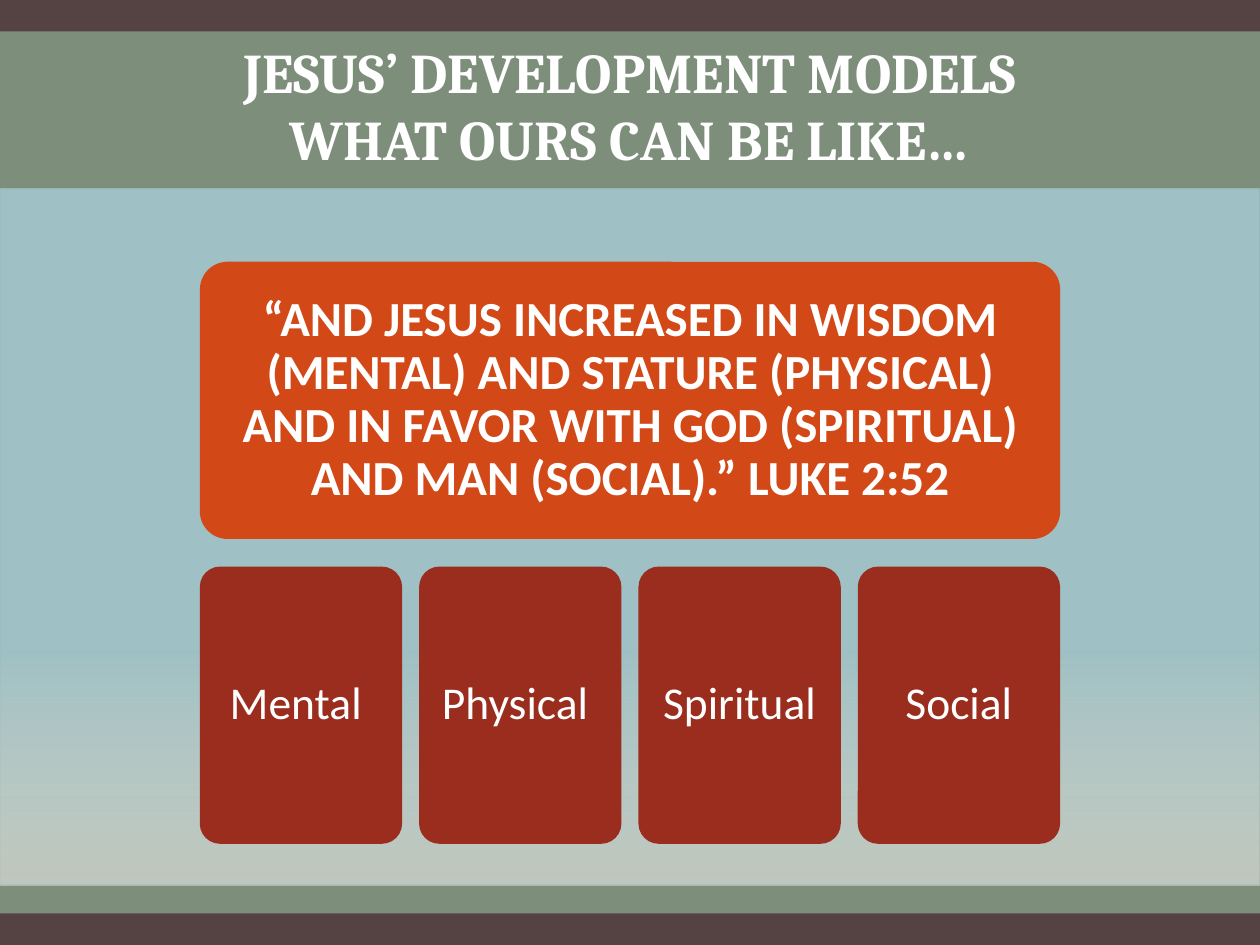
import dataclasses

import lxml.etree
import pptx
import pptx.dml.color
import pptx.enum.shapes
import pptx.enum.text
import pptx.oxml.ns
import pptx.util

Pt = pptx.util.Pt
RGB = pptx.dml.color.RGBColor.from_string
PRESET = pptx.enum.shapes.MSO_SHAPE
ANCHOR = pptx.enum.text.MSO_ANCHOR


@dataclasses.dataclass(frozen=True)
class Theme:
    frame: str = "554343"
    band: str = "829782"
    sky: str = "A8CDD7"
    white: str = "FFFFFF"
    verse: str = "D34817"
    card: str = "9B2D1F"
    title_font: str = "Cambria"
    body_font: str = "Calibri"
    title_size: int = 32
    verse_size: int = 28
    card_size: int = 26


def set_alpha(color_parent, percent):
    """Make every RGB colour below the given element partly transparent."""
    for color in color_parent.iter(pptx.oxml.ns.qn("a:srgbClr")):
        alpha = lxml.etree.SubElement(color, pptx.oxml.ns.qn("a:alpha"))
        alpha.set("val", str(percent * 1000))


class SlideBuilder:
    def __init__(self, slide, theme):
        self.slide = slide
        self.theme = theme

    def panel(self, preset, left, top, width, height):
        """Add a shape without line or shadow; the caller fills it."""
        panel = self.slide.shapes.add_shape(
            preset, Pt(left), Pt(top), Pt(width), Pt(height))
        panel.shadow.inherit = False
        panel.line.fill.background()
        return panel

    def band(self, top, height, color, opacity=100):
        band = self.panel(PRESET.RECTANGLE, 0, top, 720, height)
        band.fill.solid()
        band.fill.fore_color.rgb = RGB(color)
        if opacity < 100:
            set_alpha(band.fill._xPr.solidFill, opacity)

    def gradient_band(self, top, height, stops):
        """Fade downwards through two (position, colour, opacity) stops."""
        band = self.panel(PRESET.RECTANGLE, 0, top, 720, height)
        band.fill.gradient()
        band.fill.gradient_angle = 270
        for stop, (position, color, opacity) in zip(band.fill.gradient_stops, stops):
            stop.position = position
            stop.color.rgb = RGB(color)
            set_alpha(stop._gs, opacity)

    def run(self, paragraph, text, font_name, size, bold):
        run = paragraph.add_run()
        run.text = text
        run.font.name = font_name
        run.font.size = Pt(size)
        run.font.bold = bold
        run.font.color.rgb = RGB(self.theme.white)

    def card(self, left, top, width, height, color, text, size, bold=False):
        card = self.panel(PRESET.ROUNDED_RECTANGLE, left, top, width, height)
        card.adjustments[0] = 0.1
        card.fill.solid()
        card.fill.fore_color.rgb = RGB(color)
        frame = card.text_frame
        frame.word_wrap = True
        frame.vertical_anchor = ANCHOR.MIDDLE
        inset = Pt(0.3 * size)
        frame.margin_left = frame.margin_right = inset
        frame.margin_top = frame.margin_bottom = inset
        paragraph = frame.paragraphs[0]
        paragraph.alignment = pptx.enum.text.PP_ALIGN.CENTER
        paragraph.line_spacing = 0.9
        self.run(paragraph, text, self.theme.body_font, size, bold)

    def title(self, lines, left, top, width, height):
        title = self.slide.shapes.title
        title.left, title.top = Pt(left), Pt(top)
        title.width, title.height = Pt(width), Pt(height)
        self.slide.shapes._spTree.append(title._element)  # in front of the bands
        frame = title.text_frame
        frame.auto_size = pptx.enum.text.MSO_AUTO_SIZE.NONE
        frame.word_wrap = True
        frame.vertical_anchor = ANCHOR.BOTTOM
        paragraph = frame.paragraphs[0]
        paragraph.alignment = pptx.enum.text.PP_ALIGN.CENTER
        for index, line in enumerate(lines):
            if index:
                paragraph.add_line_break()
            self.run(paragraph, line, self.theme.title_font,
                     self.theme.title_size, True)


def main():
    theme = Theme()
    deck = pptx.Presentation()
    deck.slide_width, deck.slide_height = Pt(720), Pt(540)
    builder = SlideBuilder(deck.slides.add_slide(deck.slide_layouts[5]), theme)

    builder.band(0, 540, theme.frame)
    builder.band(18, 504, theme.band, opacity=90)
    builder.gradient_band(107.8, 398.2,
                          [(0.66, theme.sky, 79), (1, theme.white, 50)])

    left, width, height = 114.2, 491.6, 158.4
    builder.card(
        left, 149.6, width, height, theme.verse,
        "“AND JESUS INCREASED IN WISDOM (MENTAL) AND STATURE (PHYSICAL) "
        "AND IN FAVOR WITH GOD (SPIRITUAL) AND MAN (SOCIAL).” LUKE 2:52",
        theme.verse_size, bold=True)

    areas = ["Mental ", "Physical ", "Spiritual", "Social"]
    card_width = 115.6
    pitch = (width - card_width) / (len(areas) - 1)
    for column, area in enumerate(areas):
        builder.card(left + column * pitch, 323.8, card_width, height,
                     theme.card, area, theme.card_size)

    builder.title(["JESUS’ DEVELOPMENT MODELS", "WHAT OURS CAN BE LIKE…"],
                  0, 12, 720, 90)
    deck.save("out.pptx")


if __name__ == "__main__":
    main()
